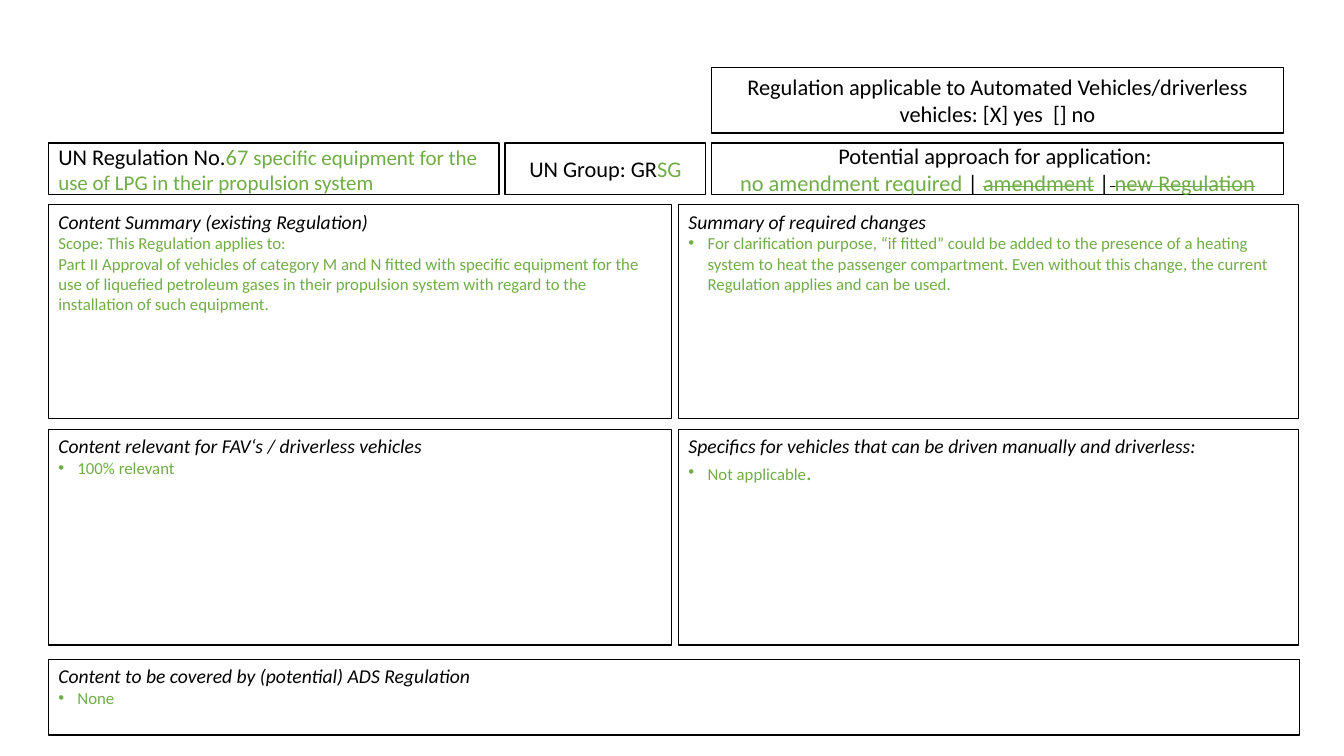
import pptx
import pptx.util
import pptx.dml.color
import pptx.enum.shapes
import pptx.enum.text
import pptx.oxml.ns
import lxml.etree

Inches = pptx.util.Inches
COLORS = {"white": "FFFFFF", "black": "000000", "green": "70AD47"}


class RegulationSlide:
    """Draws the bordered boxes of a regulation overview slide."""

    font = "Calibri"
    head_size, body_size, title_size = 14, 12, 16

    def __init__(self, slide):
        self.slide = slide

    def color(self, name):
        return pptx.dml.color.RGBColor.from_string(COLORS[name])

    def box(self, left, top, width, height, anchor):
        sp = self.slide.shapes.add_shape(
            pptx.enum.shapes.MSO_SHAPE.RECTANGLE,
            Inches(left), Inches(top), Inches(width), Inches(height))
        sp.shadow.inherit = False
        sp.fill.solid()
        sp.fill.fore_color.rgb = self.color("white")
        sp.line.color.rgb = self.color("black")
        sp.line.width = pptx.util.Pt(1)
        tf = sp.text_frame
        tf.word_wrap = True
        tf.vertical_anchor = anchor
        return tf

    def run(self, p, text, color, size, italic=False, strike=False):
        r = p.add_run()
        r.text = text
        r.font.name = self.font
        r.font.size = pptx.util.Pt(size)
        r.font.italic = italic
        r.font.color.rgb = self.color(color)
        if strike:
            r._r.get_or_add_rPr().set("strike", "sngStrike")

    def bullet(self, p):
        pPr = p._p.get_or_add_pPr()
        pPr.set("marL", str(Inches(0.19)))
        pPr.set("indent", str(Inches(-0.19)))
        font = lxml.etree.SubElement(pPr, pptx.oxml.ns.qn("a:buFont"))
        font.set("typeface", "Arial")
        char = lxml.etree.SubElement(pPr, pptx.oxml.ns.qn("a:buChar"))
        char.set("char", "•")

    def title_box(self, left, top, width, height, lines, centered=True):
        tf = self.box(left, top, width, height, pptx.enum.text.MSO_ANCHOR.MIDDLE)
        p = tf.paragraphs[0]
        align = pptx.enum.text.PP_ALIGN
        p.alignment = align.CENTER if centered else align.LEFT
        for i, line in enumerate(lines):
            if i:
                p.add_line_break()
            for text, color, *style in line:
                size = style[0] if style else self.title_size
                self.run(p, text, color, size, strike="strike" in style)

    def content_box(self, left, top, width, height, heading, lines, bulleted=True):
        tf = self.box(left, top, width, height, pptx.enum.text.MSO_ANCHOR.TOP)
        p = tf.paragraphs[0]
        p.alignment = pptx.enum.text.PP_ALIGN.LEFT
        self.run(p, heading, "black", self.head_size, italic=True)
        p = tf.add_paragraph()
        p.alignment = pptx.enum.text.PP_ALIGN.LEFT
        if bulleted:
            self.bullet(p)
        for i, line in enumerate(lines):
            if i:
                p.add_line_break()
            for text, size in line:
                self.run(p, text, "green", size)


def main():
    prs = pptx.Presentation()
    prs.slide_width, prs.slide_height = Inches(13.33), Inches(7.5)
    s = RegulationSlide(prs.slides.add_slide(prs.slide_layouts[6]))
    body, title = s.body_size, s.title_size

    left, right = (0.48, 6.18), (6.73, 6.15)
    summary, relevance = (2.03, 2.12), (4.26, 2.14)
    contents = [
        (left, summary, "Content Summary (existing Regulation)", [
            [("Scope: This Regulation applies to:", body)],
            [("Part II Approval of vehicles of category M and N fitted with "
              "specific equipment for the use of liquefied petroleum gases in "
              "their propulsion system with regard to the installation of such "
              "equipment.", body)]], False),
        (left, relevance, "Content relevant for FAV‘s / driverless vehicles",
         [[("100% relevant", body)]], True),
        ((0.48, 12.41), (6.54, 0.75),
         "Content to be covered by (potential) ADS Regulation",
         [[("None", body)]], True),
        (right, relevance,
         "Specifics for vehicles that can be driven manually and driverless:",
         [[("Not applicable", body), (".", title)]], True),
        (right, summary, "Summary of required changes", [
            [("For clarification purpose, “if fitted” could be added to the "
              "presence of a heating system to heat the passenger compartment. "
              "Even without this change, the current Regulation applies and can "
              "be used.", body)]], True),
    ]
    for (x, width), (y, height), heading, lines, bulleted in contents:
        s.content_box(x, y, width, height, heading, lines, bulleted)

    row_top, row_height = 1.42, 0.51
    s.title_box(7.06, row_top, 5.67, row_height, [
        [("Potential approach for application: ", "black")],
        [("no amendment required ", "green"), ("| ", "black"),
         ("amendment", "green", title, "strike"), (" |", "black"),
         (" ", "black", title, "strike"),
         ("new Regulation", "green", title, "strike")]])
    s.title_box(7.06, 0.67, 5.67, 0.65, [
        [("Regulation applicable to Automated Vehicles/driverless vehicles: "
          "[X] yes  [] no", "black")]])
    s.title_box(5.01, row_top, 1.99, row_height,
                [[("UN Group: GR", "black"), ("SG", "green")]])
    s.title_box(0.48, row_top, 4.47, row_height, [
        [("UN Regulation No.", "black"), ("67 ", "green"),
         ("specific equipment for the use of LPG in their propulsion system",
          "green", 15)]], centered=False)

    prs.save("out.pptx")


if __name__ == "__main__":
    main()
